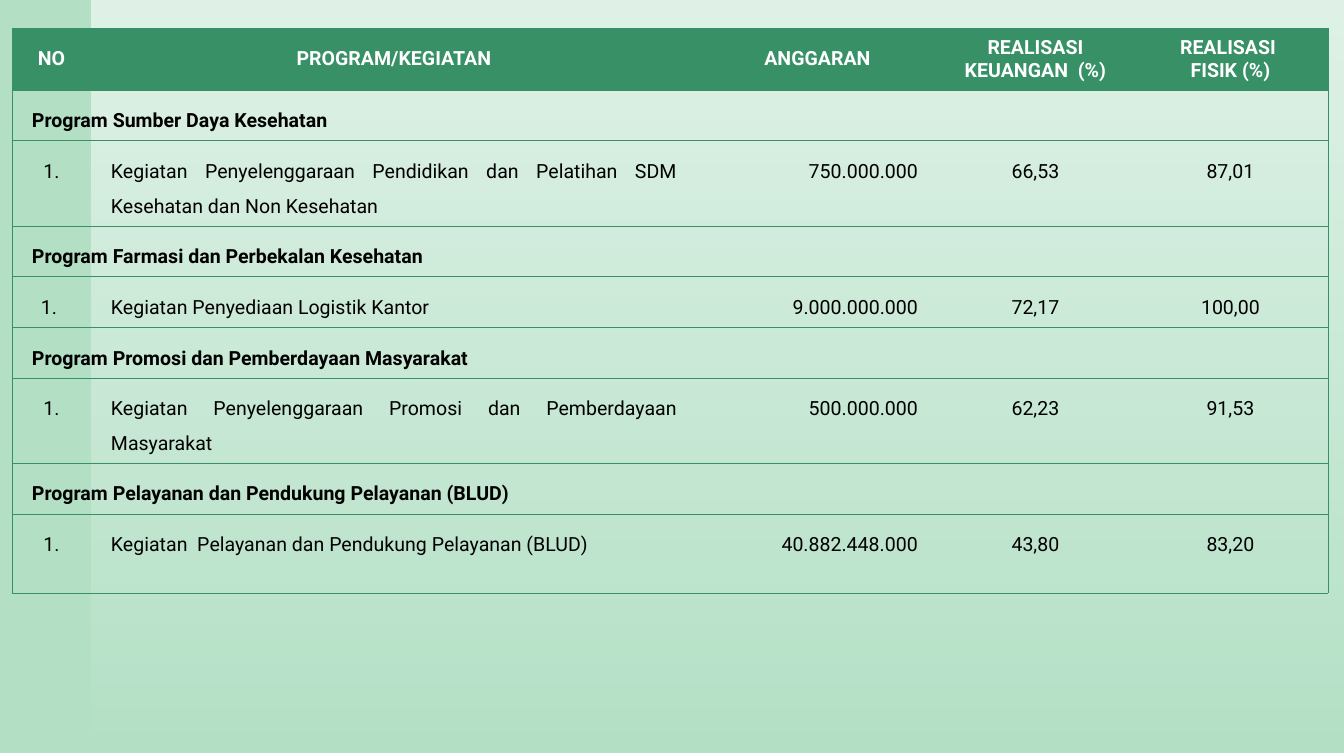
import pptx
import pptx.util
import pptx.dml.color
import pptx.enum.shapes
import pptx.enum.text
import lxml.etree

UNIT = 914400 / 100.4
GREEN = "389066"
NS = "{http://schemas.openxmlformats.org/drawingml/2006/main}"
ALIGN = pptx.enum.text.PP_ALIGN
ANCHOR = pptx.enum.text.MSO_ANCHOR


def px(size):
    return pptx.util.Emu(round(size * UNIT))


def color(code):
    return pptx.dml.color.RGBColor.from_string(code)


deck = pptx.Presentation()
deck.slide_width = px(1344)
deck.slide_height = px(753)
slide = deck.slides.add_slide(deck.slide_layouts[6])
slide.background.fill.solid()
slide.background.fill.fore_color.rgb = color("B3E0C5")

panel = slide.shapes.add_shape(
    pptx.enum.shapes.MSO_SHAPE.RECTANGLE, px(92), 0, px(1252), px(753))
panel.shadow.inherit = False
panel.line.fill.background()
panel.fill.gradient()
panel.fill.gradient_angle = 270
for stop, place, alpha in zip(panel.fill.gradient_stops, (0, 1), (60000, 0)):
    stop.position = place
    stop.color.rgb = color("FFFFFF")
for tone, alpha in zip(panel.element.iter(NS + "srgbClr"), (60000, 0)):
    lxml.etree.SubElement(tone, NS + "alpha", val=str(alpha))

rows = [
    ["NO", "PROGRAM/KEGIATAN", "ANGGARAN", "REALISASI KEUANGAN  (%)", "REALISASI \nFISIK (%)"],
    ["Program Sumber Daya Kesehatan"],
    ["1.", "Kegiatan Penyelenggaraan Pendidikan dan Pelatihan SDM Kesehatan dan Non Kesehatan",
     "750.000.000", "66,53", "87,01"],
    ["Program Farmasi dan Perbekalan Kesehatan"],
    ["1. ", "Kegiatan Penyediaan Logistik Kantor", "9.000.000.000", "72,17", "100,00"],
    ["Program Promosi dan Pemberdayaan Masyarakat"],
    ["1.", "Kegiatan Penyelenggaraan Promosi dan Pemberdayaan Masyarakat",
     "500.000.000", "62,23", "91,53"],
    ["Program Pelayanan dan Pendukung Pelayanan (BLUD)"],
    ["1.", "Kegiatan  Pelayanan dan Pendukung Pelayanan (BLUD)",
     "40.882.448.000", "43,80", "83,20"],
]
widths = [79, 606, 241, 195, 195]
heights = [62, 49, 85, 49, 49, 49, 85, 49, 79]
aligns = [ALIGN.CENTER, ALIGN.JUSTIFY, ALIGN.RIGHT, ALIGN.CENTER, ALIGN.CENTER]

frame = slide.shapes.add_table(
    len(rows), len(widths), px(12), px(28), px(sum(widths)), px(sum(heights)))
table = frame.table
table.first_row = False
table.horz_banding = False
style = next(frame.element.iter(NS + "tableStyleId"))
style.text = "{2D5ABB26-0587-4C30-8999-92F81FD0307C}"
for col, width in zip(table.columns, widths):
    col.width = px(width)
for row, height in zip(table.rows, heights):
    row.height = px(height)

last = len(rows) - 1
end = len(widths) - 1
for r, texts in enumerate(rows):
    head = r == 0
    group = len(texts) == 1
    if group:
        table.cell(r, 0).merge(table.cell(r, end))
    for c in range(len(widths)):
        cell = table.cell(r, c)
        cell.margin_left = cell.margin_right = px(20)
        cell.margin_top = cell.margin_bottom = px(8)
        cell.vertical_anchor = ANCHOR.MIDDLE if head else ANCHOR.TOP
        if head:
            cell.fill.solid()
            cell.fill.fore_color.rgb = color(GREEN)
        else:
            cell.fill.background()

        sides = {
            "lnL": c == 0,
            "lnR": c == end or group and c == 0,
            "lnT": head or group,
            "lnB": group or r == last,
        }
        props = cell._tc.get_or_add_tcPr()
        edges = [side for side, shown in sides.items() if shown]
        for spot, side in enumerate(edges):
            edge = lxml.etree.Element(NS + side, w="6350")
            solid = lxml.etree.SubElement(edge, NS + "solidFill")
            lxml.etree.SubElement(solid, NS + "srgbClr", val=GREEN)
            props.insert(spot, edge)

        if c >= len(texts):
            continue
        text = cell.text_frame
        for n, line in enumerate(texts[c].split("\n")):
            para = text.add_paragraph() if n else text.paragraphs[0]
            if head:
                para.alignment = ALIGN.CENTER
            else:
                para.alignment = ALIGN.LEFT if group else aligns[c]
                para.line_spacing = 1.5
            run = para.add_run()
            run.text = line
            run.font.name = "Roboto"
            run.font.size = pptx.util.Pt(14)
            run.font.bold = head or group
            run.font.color.rgb = color("FFFFFF" if head else "000000")

deck.save("out.pptx")
